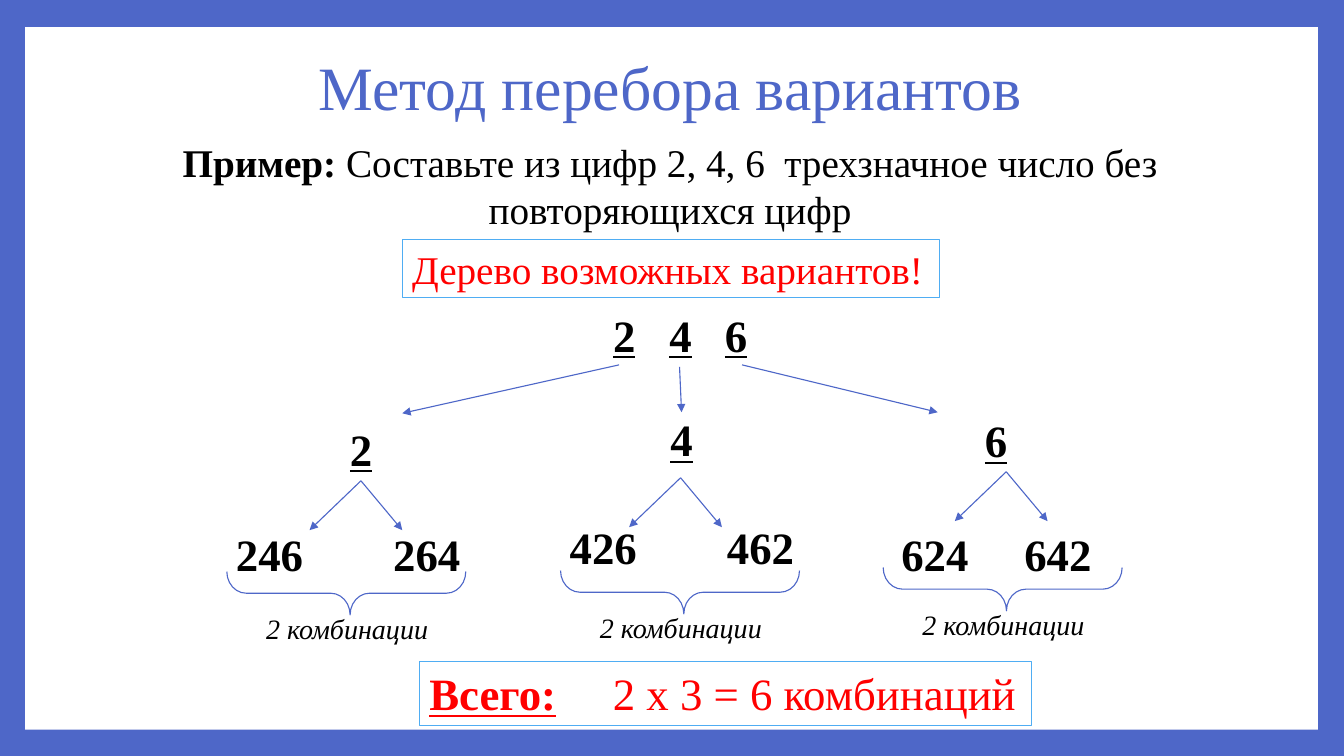
from lxml.etree import SubElement
from pptx import Presentation
from pptx.dml.color import RGBColor
from pptx.enum.shapes import MSO_CONNECTOR, MSO_SHAPE
from pptx.enum.text import MSO_ANCHOR, PP_ALIGN as Align
from pptx.oxml.ns import qn
from pptx.util import Emu, Pt

PX = 9144  # 100 px to the inch
FONT = "Times New Roman"
BLUE, SKY, RED, BLACK, WHITE = "4E67C8", "4FADF3", "FF0000", "000000", "FFFFFF"
BOTTOM = 2  # connection site
JOIN_REACH = 2

# digit, its corner, fork point, leaf numbers, their corner, inset and tab, brace corner
BRANCHES = [
    ("2", (324, 413), (358, 477), "246\t264", (213, 518), 21, 156, (322, 470)),
    ("4", (642, 404), (675, 474), "426\t462", (544, 511), 21, 156, (653, 469)),
    ("6", (954, 405), (998, 468), "624\t642", (856, 518), 38, 122, (973, 466)),
]
FORK_ENDS = [(-51, 49), (41, 49)]


def px(length):
    return Emu(length * PX)


def color(hex_code):
    return RGBColor.from_string(hex_code)


def add_panel(slide, box, border=None):
    panel = slide.shapes.add_shape(MSO_SHAPE.RECTANGLE, *map(px, box))
    panel.shadow.inherit = False
    panel.fill.solid()
    panel.fill.fore_color.rgb = color(WHITE)
    if border:
        panel.line.color.rgb = color(border)
        panel.line.width = Pt(0.75)
    else:
        panel.line.fill.background()
    return panel


def write(holder, parts, size, hue=BLACK, align=Align.CENTER, wrap=True,
          inset=10, tabs=()):
    """Fill one paragraph; each part is a text and its style letters (b, i, u)."""
    frame = holder.text_frame
    frame.word_wrap = wrap
    frame.vertical_anchor = MSO_ANCHOR.TOP
    frame.margin_left = px(inset)
    line = frame.paragraphs[0]
    line.alignment = align
    for text, style in parts:
        run = line.add_run()
        run.text = text
        font = run.font
        font.name, font.size = FONT, Pt(size)
        font.color.rgb = color(hue)
        font.bold, font.italic, font.underline = (key in style for key in "biu")
    if tabs:
        stops = SubElement(line._p.get_or_add_pPr(), qn("a:tabLst"))
        for stop in tabs:
            SubElement(stops, qn("a:tab"), pos=str(px(stop)), algn="l")
    return holder


def add_label(slide, box, parts, size, **options):
    return write(slide.shapes.add_textbox(*map(px, box)), parts, size, **options)


def add_arrow(slide, start, end, source):
    arrow = slide.shapes.add_connector(
        MSO_CONNECTOR.STRAIGHT, *map(px, (*start, *end)))
    # Join the arrow where it leaves the middle of the label's lower side
    off_x = abs(source.left + source.width // 2 - px(start[0]))
    off_y = abs(source.top + source.height - px(start[1]))
    if max(off_x, off_y) <= px(JOIN_REACH):
        arrow.begin_connect(source, BOTTOM)
    arrow.line.color.rgb = color(BLUE)
    arrow.line.width = Pt(0.79)
    SubElement(arrow.line._get_or_add_ln(), qn("a:tailEnd"), type="triangle")
    SubElement(arrow._element.spPr, qn("a:effectLst"))


def add_brace(slide, left, top):
    brace = slide.shapes.add_shape(
        MSO_SHAPE.LEFT_BRACE, *map(px, (left, top, 43, 237)))
    brace.rotation = 270
    brace.adjustments[0], brace.adjustments[1] = 0.447, 0.516
    brace.shadow.inherit = False
    brace.fill.background()
    brace.line.color.rgb = color(BLUE)
    brace.line.width = Pt(0.79)


def add_branch(slide, digit, corner, fork, leaves, leaf_corner, inset, tab, brace):
    digit_label = add_label(slide, (*corner, 68, 64), [(digit, "bu")], 32)
    for dx, dy in FORK_ENDS:
        add_arrow(slide, fork, (fork[0] + dx, fork[1] + dy), digit_label)
    add_label(slide, (*leaf_corner, 264, 64), [(leaves, "b")], 32,
              align=Align.LEFT, inset=inset, tabs=[tab])
    add_brace(slide, *brace)
    add_label(slide, (brace[0] - 68, brace[1] + 132, 182, 44),
              [("2 комбинации", "i")], 20, align=Align.LEFT, wrap=False)


def main():
    deck = Presentation()
    deck.slide_width, deck.slide_height = px(1333), px(750)
    slide = deck.slides.add_slide(deck.slide_layouts[6])

    # Blue frame around a white sheet
    slide.background.fill.solid()
    slide.background.fill.fore_color.rgb = color(BLUE)
    add_panel(slide, (25, 27, 1282, 697))

    # Title and task
    title = add_label(slide, (125, 47, 1080, 85),
                      [("Метод перебора вариантов", "")], 44, hue=BLUE)
    title.text_frame.vertical_anchor = MSO_ANCHOR.MIDDLE
    title.text_frame.paragraphs[0].line_spacing = 0.9
    add_label(slide, (44, 132, 1241, 104), [
        ("Пример: ", "b"),
        ("Составьте из цифр 2, 4, 6  трехзначное число без повторяющихся цифр", ""),
    ], 28)
    write(add_panel(slide, (399, 238, 533, 57), SKY),
          [("Дерево возможных вариантов!", "")], 28, hue=RED,
          align=Align.LEFT, wrap=False)

    # Root of the tree
    root = add_label(slide, (560, 300, 228, 64), [("2\t4\t6", "bu")], 32,
                     align=Align.LEFT, inset=48, tabs=[56, 111])
    for start, end in [((614, 362), (399, 410)),
                       ((675, 364), (676, 409)),
                       ((736, 362), (930, 409))]:
        add_arrow(slide, start, end, root)

    # Branches with their leaf numbers
    for branch in BRANCHES:
        add_branch(slide, *branch)

    # Total
    write(add_panel(slide, (416, 656, 607, 64), SKY),
          [("Всего:", "bu"), ("\t2 х 3 = 6 комбинаций", "")], 32, hue=RED,
          align=Align.LEFT, tabs=[182])

    deck.save("out.pptx")


if __name__ == "__main__":
    main()
